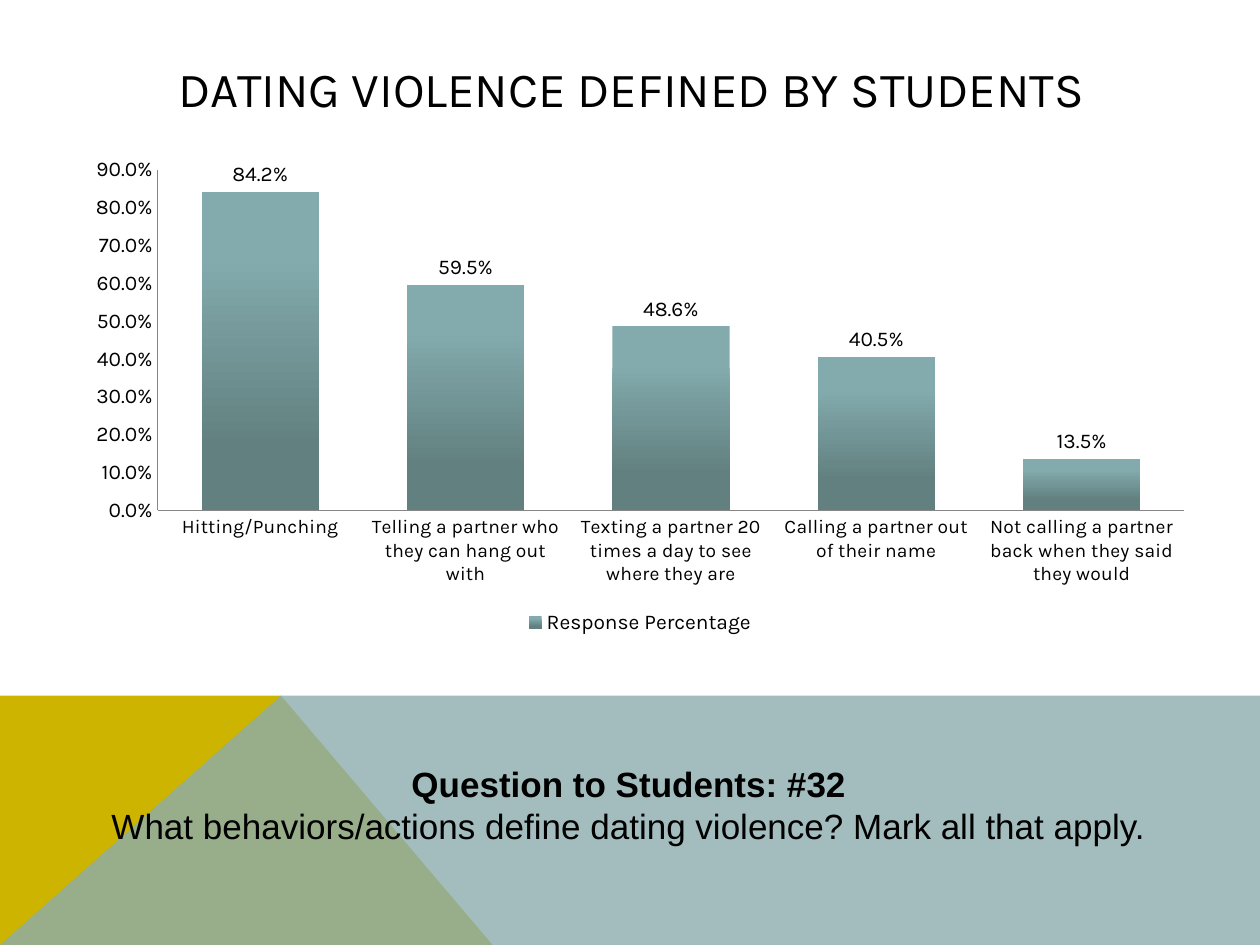
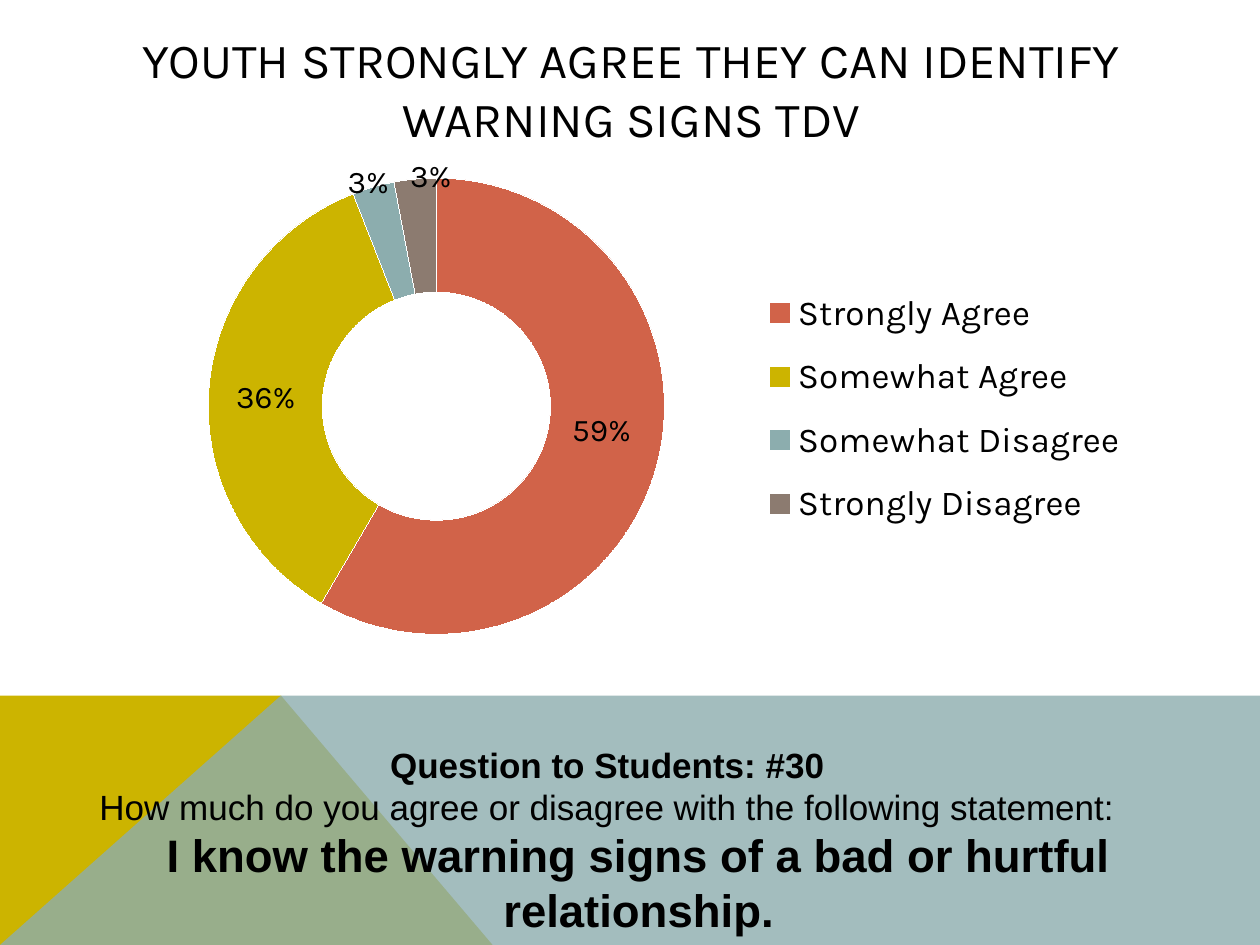
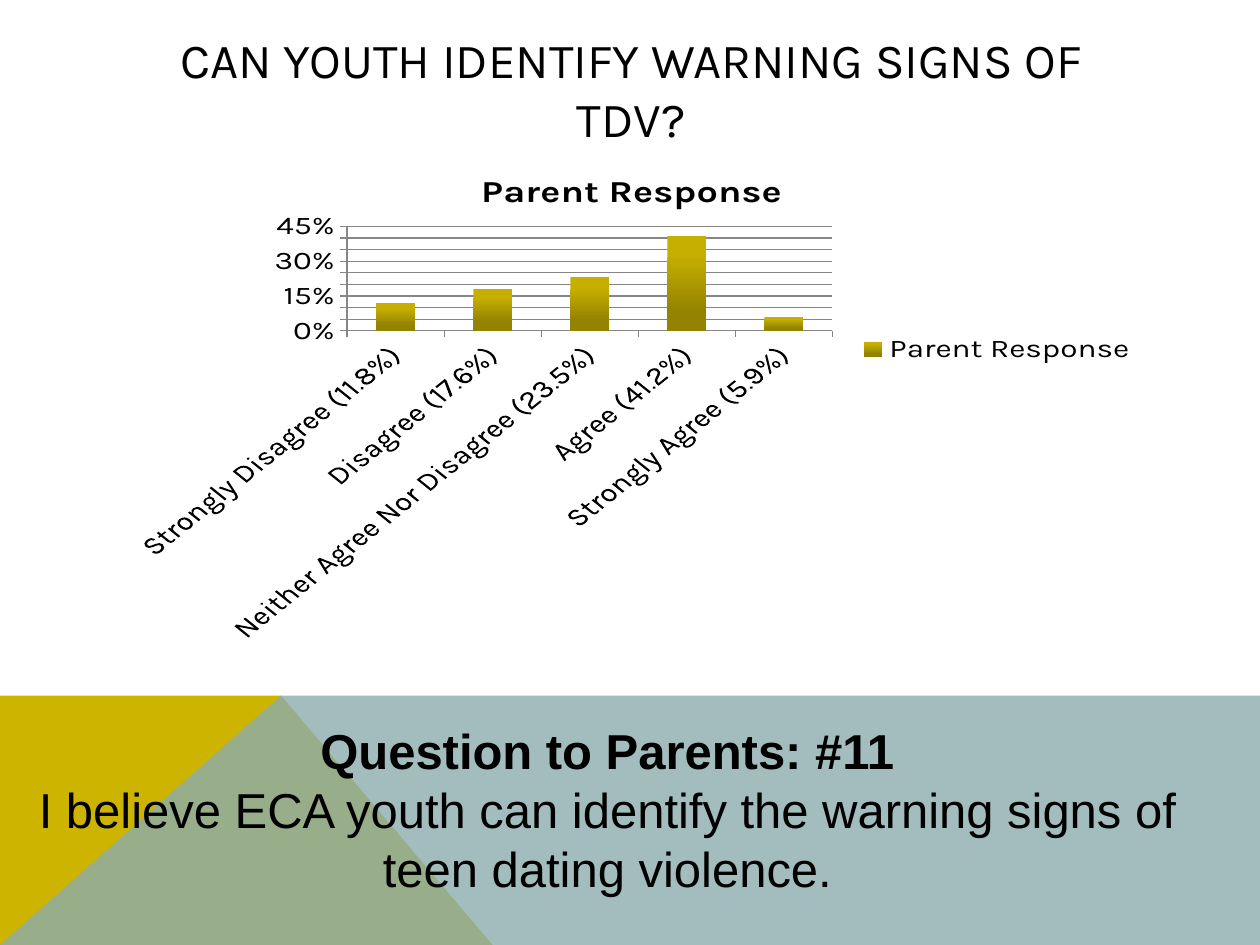
from typing import NamedTuple

from pptx import Presentation
from pptx.chart.chart import Chart
from pptx.chart.data import CategoryChartData
from pptx.dml.color import RGBColor
from pptx.dml.fill import FillFormat
from pptx.enum.chart import XL_CHART_TYPE, XL_LABEL_POSITION, XL_LEGEND_POSITION, XL_TICK_MARK
from pptx.enum.text import MSO_ANCHOR, MSO_AUTO_SIZE, PP_ALIGN
from pptx.oxml.ns import qn
from pptx.oxml.xmlchemy import BaseOxmlElement, OxmlElement
from pptx.slide import Slide
from pptx.text.text import Font
from pptx.util import Emu, Pt

PX = 9144  # 100 px to the inch
TITLE_ONLY = 5
HEADING_FONT, BODY_FONT = "Karla", "Arial"
CENTER, MIDDLE = PP_ALIGN.CENTER, MSO_ANCHOR.MIDDLE
NO_FIT, GROW = MSO_AUTO_SIZE.NONE, MSO_AUTO_SIZE.SHAPE_TO_FIT_TEXT
CLUSTERED, STACKED = XL_CHART_TYPE.COLUMN_CLUSTERED, XL_CHART_TYPE.COLUMN_STACKED
DOUGHNUT = XL_CHART_TYPE.DOUGHNUT
BOTTOM, RIGHT = XL_LEGEND_POSITION.BOTTOM, XL_LEGEND_POSITION.RIGHT
OUTSIDE_END = XL_LABEL_POSITION.OUTSIDE_END
TICK_NONE, TICK_OUT = XL_TICK_MARK.NONE, XL_TICK_MARK.OUTSIDE

COLORS = {
    "text": "000000",
    "background": "FFFFFF",
    "gold": "CCB400",
    "gold_light": "C6AF00",
    "gold_dark": "948300",
    "teal": "8CADAE",
    "teal_light": "83ABAD",
    "teal_dark": "628080",
    "red": "D16349",
    "taupe": "8C7B70",
    "axis": "868686",
}


class Box(NamedTuple):
    left: int
    top: int
    width: int
    height: int

    def emu(self) -> list[Emu]:
        return [Emu(length * PX) for length in self]


class Band(NamedTuple):
    color: str
    points: list[tuple[int, int]]
    opacity: int = 100


class Line(NamedTuple):
    text: str
    size: int
    bold: bool = False
    level: int = 0


class Slice(NamedTuple):
    color: str
    label_shift: dict[str, float]


class Survey(NamedTuple):
    kind: XL_CHART_TYPE
    box: Box
    series: str
    answers: dict[str, float]
    legend: XL_LEGEND_POSITION
    size: int
    legend_size: int


TITLE_BOX = Box(90, 40, 822, 60)
BANDS = [
    Band("gold", [(0, 750), (0, 552), (223, 552), (391, 750)]),
    Band("teal", [(0, 750), (223, 552), (1000, 552), (1000, 750)], opacity=80),
]

DEFINITIONS = Survey(
    CLUSTERED, Box(58, 117, 900, 391), "Response Percentage",
    {
        "Hitting/Punching": 0.842,
        "Telling a partner who they can hang out with": 0.595,
        "Texting a partner 20 times a day to see where they are": 0.486,
        "Calling a partner out of their name": 0.405,
        "Not calling a partner back when they said they would": 0.135,
    },
    BOTTOM, 12, 12,
)
YOUTH_AGREEMENT = Survey(
    DOUGHNUT, Box(83, 125, 823, 391), "Series 1",
    {
        "Strongly Agree": 59,
        "Somewhat Agree": 36,
        "Somewhat Disagree": 3,
        "Strongly Disagree": 3,
    },
    RIGHT, 18, 20,
)
AGREEMENT_SLICES = [
    Slice("red", {"x": 0, "y": -0.04}),
    Slice("gold", {"x": 0, "y": 0.01}),
    Slice("teal", {"x": -0.02, "y": -0.12}),
    Slice("taupe", {"x": 0.01, "y": -0.12}),
]
RING_AREA = {"x": 0.1, "y": 0.04, "w": 0.44, "h": 0.93}
AGREEMENT_LEGEND_AREA = {"x": 0.63, "y": 0.23, "w": 0.36, "h": 0.56}
PARENT_RESPONSE = Survey(
    STACKED, Box(90, 120, 823, 391), "Parent Response",
    {
        "Strongly Disagree (11.8%)": 0.12,
        "Disagree (17.6%)": 0.18,
        "Neither Agree Nor Disagree (23.5%)": 0.23,
        "Agree (41.2%)": 0.41,
        "Strongly Agree (5.9%)": 0.06,
    },
    RIGHT, 18, 18,
)


def rgb(name: str) -> RGBColor:
    return RGBColor.from_string(COLORS[name])


def style_font(font: Font, name: str, size: float, bold: bool = False) -> None:
    font.name, font.size, font.bold = name, Pt(size), bold
    font.color.rgb = rgb("text")


def paint(fill: FillFormat, color: str) -> None:
    fill.solid()
    fill.fore_color.rgb = rgb(color)


def shade_down(fill: FillFormat, light: str, dark: str) -> None:
    """Fill with a gradient that darkens towards the bottom."""
    fill.gradient()
    fill.gradient_angle = 270
    for stop, color, position in zip(fill.gradient_stops, (light, dark), (0.2, 0.8)):
        stop.color.rgb = rgb(color)
        stop.position = position


def place(part: BaseOxmlElement, index: int, values: dict[str, float], edge: bool) -> None:
    """Give a chart part a manual layout, in fractions of the chart, as its child at index."""
    for automatic in part.findall(qn("c:layout")):
        part.remove(automatic)
    layout, manual = OxmlElement("c:layout"), OxmlElement("c:manualLayout")
    layout.append(manual)
    modes = {"xMode": "edge", "yMode": "edge"} if edge else {}
    for name, value in {**modes, **values}.items():
        setting = OxmlElement(f"c:{name}")
        setting.set("val", str(value))
        manual.append(setting)
    part.insert(index, layout)


def add_bands_to_layout(slide: Slide) -> None:
    """Draw the bottom bands and hand them to the layout that all slides share."""
    for band in BANDS:
        builder = slide.shapes.build_freeform(*band.points[0], scale=PX)
        builder.add_line_segments(band.points[1:], close=True)
        shape = builder.convert_to_shape()
        shape.shadow.inherit = False
        shape.line.fill.background()
        paint(shape.fill, band.color)
        if band.opacity < 100:
            alpha = OxmlElement("a:alpha")
            alpha.set("val", str(band.opacity * 1000))
            shape.element.spPr.find(".//" + qn("a:srgbClr")).append(alpha)
        slide.slide_layout.shapes.element.append(shape.element)


def add_titled_slide(prs: Presentation, heading: str) -> Slide:
    slide = prs.slides.add_slide(prs.slide_layouts[TITLE_ONLY])
    title = slide.shapes.title
    title.left, title.top, title.width, title.height = TITLE_BOX.emu()
    frame = title.text_frame
    frame.text = heading
    frame.word_wrap, frame.auto_size, frame.vertical_anchor = True, NO_FIT, MIDDLE
    frame.paragraphs[0].alignment = CENTER
    style_font(frame.paragraphs[0].runs[0].font, HEADING_FONT, 28)
    return slide


def add_question(slide: Slide, box: Box, lines: list[Line]) -> None:
    frame = slide.shapes.add_textbox(*box.emu()).text_frame
    frame.word_wrap, frame.auto_size = True, GROW
    frame.text = "\n".join(line.text for line in lines)
    for paragraph, line in zip(frame.paragraphs, lines):
        paragraph.alignment, paragraph.level = CENTER, line.level
        style_font(paragraph.runs[0].font, BODY_FONT, line.size, line.bold)


def add_survey_chart(slide: Slide, survey: Survey) -> Chart:
    data = CategoryChartData()
    data.categories = survey.answers.keys()
    data.add_series(survey.series, survey.answers.values())
    chart = slide.shapes.add_chart(survey.kind, *survey.box.emu(), data).chart
    style_font(chart.font, HEADING_FONT, survey.size)
    chart.has_title = False
    chart.has_legend = True
    chart.legend.position = survey.legend
    chart.legend.include_in_layout = False
    style_font(chart.legend.font, HEADING_FONT, survey.legend_size)
    return chart


def style_columns(chart: Chart, light: str, dark: str, gap: int, tick: XL_TICK_MARK,
                  category_size: int, top: float, step: float, number_format: str) -> None:
    plot = chart.plots[0]
    plot.vary_by_categories = False
    plot.gap_width = gap
    shade_down(plot.series[0].format.fill, light, dark)
    for axis in (chart.category_axis, chart.value_axis):
        axis.major_tick_mark, axis.minor_tick_mark = tick, TICK_NONE
        axis.format.line.color.rgb = rgb("axis")
    style_font(chart.category_axis.tick_labels.font, HEADING_FONT, category_size)
    values = chart.value_axis
    values.has_major_gridlines = False
    values.minimum_scale, values.maximum_scale, values.major_unit = 0, top, step
    values.tick_labels.number_format = number_format
    values.tick_labels.number_format_is_linked = False


def show_values(chart: Chart, number_format: str) -> None:
    labels = chart.plots[0].series[0].data_labels
    labels.show_value = True
    labels.number_format, labels.number_format_is_linked = number_format, False
    for leader_lines in labels._element.findall(qn("c:showLeaderLines")):
        leader_lines.set("val", "0")


def style_slices(chart: Chart, slices: list[Slice], number_format: str) -> None:
    series = chart.plots[0].series[0]
    for index, part in enumerate(slices):
        point = series.points[index]
        paint(point.format.fill, part.color)
        point.format.line.color.rgb = rgb("background")
        style_font(point.data_label.font, HEADING_FONT, YOUTH_AGREEMENT.size)
        label = series.data_labels._element.findall(qn("c:dLbl"))[index]
        place(label, 1, part.label_shift, edge=False)
        label_format = OxmlElement("c:numFmt")
        label_format.set("formatCode", number_format)
        label_format.set("sourceLinked", "0")
        label.insert(2, label_format)


def build_definitions(slide: Slide) -> None:
    chart = add_survey_chart(slide, DEFINITIONS)
    style_columns(chart, "teal_light", "teal_dark", 75, TICK_NONE, 11, 0.9, 0.1, "0.0%")
    show_values(chart, "0.0%")
    chart.plots[0].series[0].data_labels.position = OUTSIDE_END
    add_question(slide, Box(17, 600, 964, 77), [
        Line("Question to Students: #32", 20, bold=True),
        Line("What behaviors/actions define dating violence? Mark all that apply.", 20),
    ])


def build_youth_agreement(slide: Slide) -> None:
    chart = add_survey_chart(slide, YOUTH_AGREEMENT)
    percent = '0"%"'
    show_values(chart, percent)
    style_slices(chart, AGREEMENT_SLICES, percent)
    place(chart._chartSpace.chart.plotArea, 0, RING_AREA, edge=True)
    place(chart.legend._element, 1, AGREEMENT_LEGEND_AREA, edge=True)
    add_question(slide, Box(0, 585, 964, 165), [
        Line("Question to Students: #30", 20, bold=True),
        Line("How much do you agree or disagree with the following statement:", 20),
        Line("I know the warning signs of a bad or hurtful relationship.", 26, bold=True, level=1),
    ])


def build_parent_response(slide: Slide) -> None:
    chart = add_survey_chart(slide, PARENT_RESPONSE)
    style_columns(chart, "gold_light", "gold_dark", 150, TICK_OUT, 18, 0.45, 0.05, "0%")
    chart.plots[0].overlap = 100
    chart.value_axis.has_major_gridlines = True
    chart.value_axis.major_gridlines.format.line.color.rgb = rgb("axis")
    label_body = chart.category_axis._element.find(qn("c:txPr")).find(qn("a:bodyPr"))
    label_body.set("rot", str(-45 * 60000))
    chart.has_title = True
    heading = chart.chart_title.text_frame
    heading.text = PARENT_RESPONSE.series
    style_font(heading.paragraphs[0].runs[0].font, HEADING_FONT, 21.6, bold=True)
    add_question(slide, Box(0, 567, 964, 151), [
        Line("Question to Parents: #11", 28, bold=True),
        Line("I believe ECA youth can identify the warning signs of teen dating violence.", 28),
    ])


def main() -> None:
    prs = Presentation()
    prs.slide_width, prs.slide_height = Emu(1000 * PX), Emu(750 * PX)
    pages = {
        "DATING VIOLENCE DEFINED BY STUDENTS": build_definitions,
        "YOUTH STRONGLY AGREE THEY CAN IDENTIFY WARNING SIGNS TDV": build_youth_agreement,
        "CAN YOUTH IDENTIFY WARNING SIGNS OF TDV?": build_parent_response,
    }
    for heading, build in pages.items():
        build(add_titled_slide(prs, heading))
    add_bands_to_layout(prs.slides[0])
    prs.save("out.pptx")


if __name__ == "__main__":
    main()
